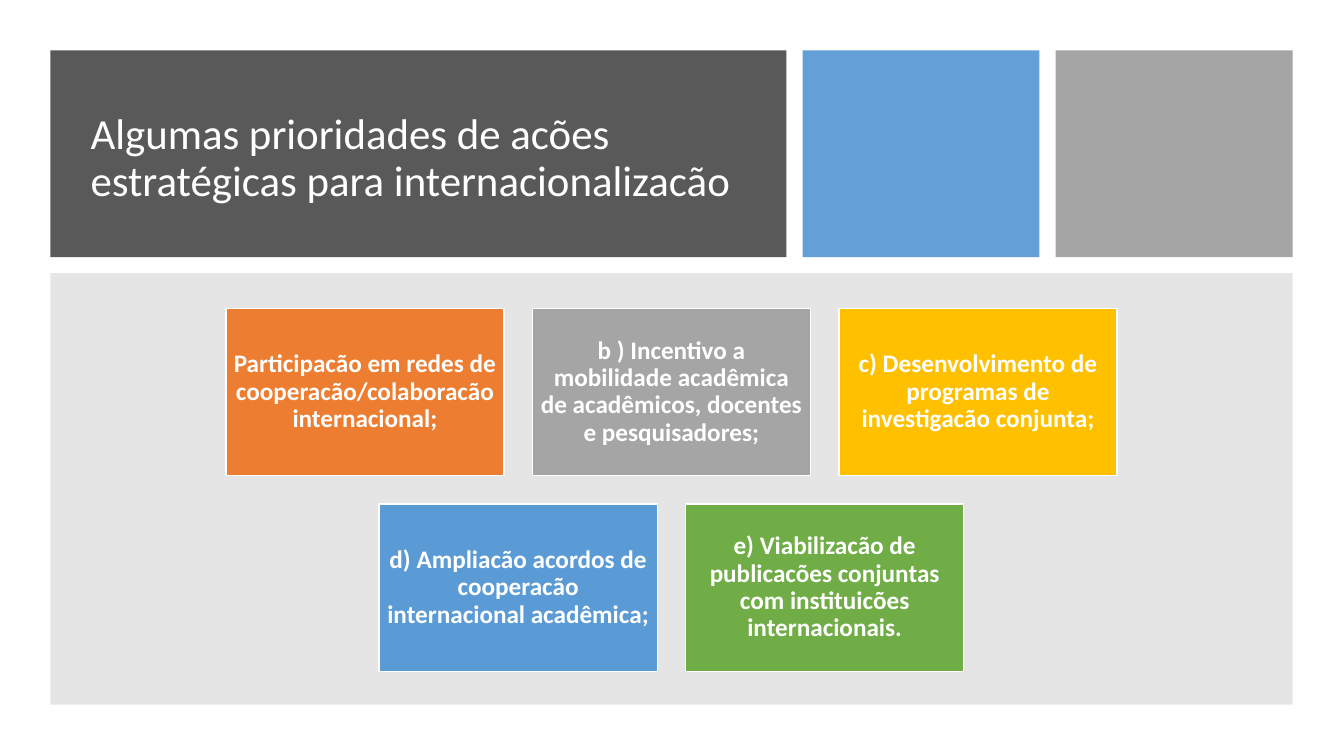
from dataclasses import dataclass

from lxml import etree
from pptx import Presentation
from pptx.dml.color import RGBColor
from pptx.enum.shapes import MSO_SHAPE
from pptx.enum.text import MSO_ANCHOR, PP_ALIGN
from pptx.oxml.ns import qn
from pptx.util import Pt

PX = 9144  # EMU in one px, 100 px to the inch


@dataclass(frozen=True)
class Theme:
    font: str = "Calibri"
    title_size: float = 30.6
    card_size: float = 18
    line_spacing: float = 0.9
    white: str = "FFFFFF"
    dark: str = "595959"
    panel: str = "808080"
    orange: str = "ED7D31"
    gray: str = "A5A5A5"
    gold: str = "FFC000"
    blue: str = "5B9BD5"
    green: str = "70AD47"


class SlideBuilder:
    def __init__(self, slide, theme):
        self.slide = slide
        self.theme = theme

    def block(self, left, top, width, height, color, opacity=100):
        """Add a borderless filled rectangle; opacity is in percent."""
        shape = self.slide.shapes.add_shape(
            MSO_SHAPE.RECTANGLE, left * PX, top * PX, width * PX, height * PX)
        shape.shadow.inherit = False
        shape.fill.solid()
        shape.fill.fore_color.rgb = RGBColor.from_string(color)
        shape.line.fill.background()
        if opacity < 100:
            fill_color = shape.element.spPr.find(qn("a:solidFill"))[0]
            etree.SubElement(fill_color, qn("a:alpha")).set("val", str(opacity * 1000))
        return shape

    def add_text(self, shape, text, size, align, bold=False):
        frame = shape.text_frame
        frame.word_wrap = True
        frame.vertical_anchor = MSO_ANCHOR.MIDDLE
        paragraph = frame.paragraphs[0]
        paragraph.alignment = align
        paragraph.line_spacing = self.theme.line_spacing
        run = paragraph.add_run()
        run.text = text
        run.font.name = self.theme.font
        run.font.size = Pt(size)
        run.font.bold = bold
        run.font.color.rgb = RGBColor.from_string(self.theme.white)

    def title(self, left, top, width, height, text):
        box = self.slide.shapes.add_textbox(left * PX, top * PX, width * PX, height * PX)
        self.add_text(box, text, self.theme.title_size, PP_ALIGN.LEFT)

    def card(self, left, top, width, height, color, text):
        shape = self.block(left, top, width, height, color)
        shape.line.color.rgb = RGBColor.from_string(self.theme.white)
        shape.line.width = Pt(1)
        frame = shape.text_frame
        frame.margin_left = frame.margin_right = 7 * PX
        frame.margin_top = frame.margin_bottom = 7 * PX
        self.add_text(shape, text, self.theme.card_size, PP_ALIGN.CENTER, bold=True)

    def card_rows(self, center, top, width, height, gap, rows):
        """Stack rows of equal cards, each row centred on the same axis."""
        for row_index, row in enumerate(rows):
            row_width = len(row) * (width + gap) - gap
            row_left = center - row_width // 2
            row_top = top + row_index * (height + gap)
            for column, (color, text) in enumerate(row):
                self.card(row_left + column * (width + gap), row_top,
                          width, height, color, text)


def main():
    presentation = Presentation()
    presentation.slide_width = 1333 * PX
    presentation.slide_height = 750 * PX
    slide = presentation.slides.add_slide(presentation.slide_layouts[6])
    theme = Theme()
    builder = SlideBuilder(slide, theme)

    builder.block(50, 50, 730, 205, theme.dark)
    builder.title(80, 80, 666, 156,
                  "Algumas prioridades de acões estratégicas para internacionalizacão")
    builder.block(796, 50, 235, 205, theme.blue, opacity=95)
    builder.block(1047, 50, 235, 205, theme.gray)
    builder.block(50, 271, 1232, 428, theme.panel, opacity=20)

    priorities = [
        [(theme.orange, "Participacão em redes de cooperacão/colaboracão internacional;"),
         (theme.gray, "b ) Incentivo a mobilidade acadêmica de acadêmicos, "
                      "docentes e pesquisadores;"),
         (theme.gold, "c) Desenvolvimento de programas de investigacão conjunta;")],
        [(theme.blue, "d) Ampliacão acordos de cooperacão internacional acadêmica;"),
         (theme.green, "e) Viabilizacão de publicacões conjuntas com "
                       "instituicões internacionais.")],
    ]
    builder.card_rows(666, 306, 276, 166, 28, priorities)
    presentation.save("out.pptx")


if __name__ == "__main__":
    main()
